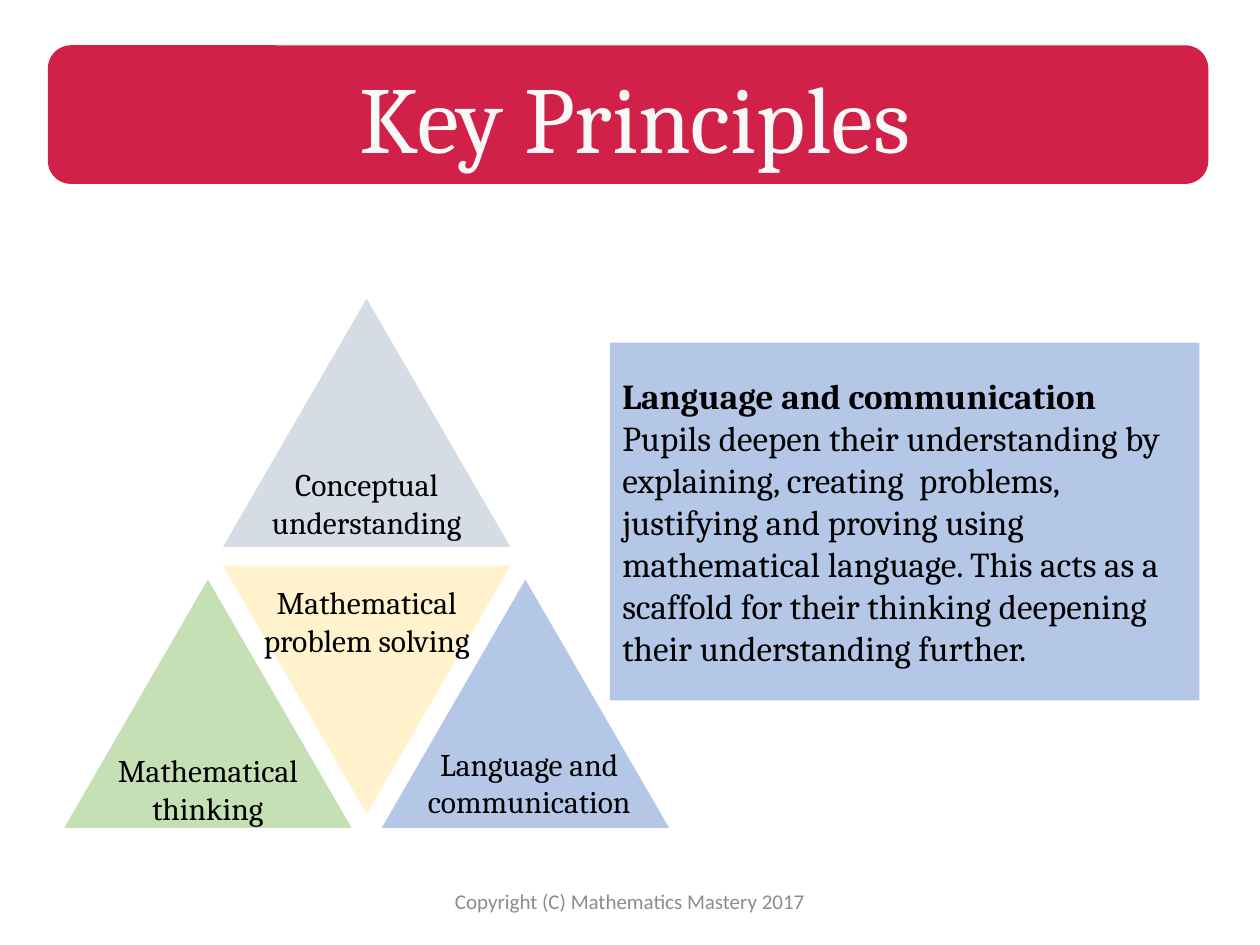
from pptx import Presentation
from pptx.dml.color import RGBColor
from pptx.enum.shapes import MSO_SHAPE as Preset
from pptx.enum.text import MSO_ANCHOR as Anchor, MSO_AUTO_SIZE as AutoSize, PP_ALIGN as Align
from pptx.util import Inches, Pt

RED = RGBColor(0xD1, 0x21, 0x49)
OFF_WHITE = RGBColor(0xF8, 0xF8, 0xF8)
BLACK = RGBColor(0x00, 0x00, 0x00)
GREY = RGBColor(0x8C, 0x8C, 0x8C)
PALE_GREY = RGBColor(0xD6, 0xDC, 0xE5)
PALE_BLUE = RGBColor(0xB4, 0xC7, 0xE7)
PALE_YELLOW = RGBColor(0xFF, 0xF2, 0xCC)
PALE_GREEN = RGBColor(0xC5, 0xE0, 0xB4)

TITLE_ONLY = 5
SIDE, HEIGHT = 2.28, 1.97  # one small triangle


def add_filled(slide, preset, box, color):
    shape = slide.shapes.add_shape(preset, *map(Inches, box))
    shape.shadow.inherit = False
    shape.fill.solid()
    shape.fill.fore_color.rgb = color
    shape.line.fill.background()
    return shape


def write(shape, lines, size, color=BLACK, font="Cambria", align=Align.CENTER, anchor=Anchor.TOP):
    frame = shape.text_frame
    frame.text = "\n".join(lines)
    frame.word_wrap = True
    frame.auto_size = AutoSize.NONE
    frame.vertical_anchor = anchor
    for paragraph in frame.paragraphs:
        paragraph.alignment = align
        paragraph.font.name = font
        paragraph.font.size = Pt(size)
        paragraph.font.color.rgb = color


def add_banner(slide, left, top, width, height):
    banner = add_filled(slide, Preset.ROUNDED_RECTANGLE, (left, top, width, height), RED)
    title = slide.shapes.title
    title._element.addprevious(banner._element)  # banner goes behind the title
    title.left, title.top = Inches(left + 0.13), Inches(top + 0.05)
    title.width, title.height = Inches(width - 0.15), Inches(height - 0.09)
    write(title, ["Key Principles"], 54, OFF_WHITE, anchor=Anchor.MIDDLE)


def add_pyramid(slide, left, top, width, height):
    column = (width - SIDE) / 2
    base = top + height - HEIGHT
    # column, triangle top, fill, rotation, label, label centre, label top, label width
    parts = [
        (1, top, PALE_GREY, 0, "Conceptual understanding", 2.91, 3.64, 2.05),
        (2, base, PALE_BLUE, 0, "Language and communication", 4.2, 5.86, 2.07),
        (1, base - 0.11, PALE_YELLOW, 180, "Mathematical problem solving", 2.91, 4.58, 1.85),
        (0, base, PALE_GREEN, 0, "Mathematical thinking", 1.65, 5.91, 1.79),
    ]
    for index, triangle_top, color, rotation, *_ in parts:
        box = (left + index * column, triangle_top, SIDE, HEIGHT)
        add_filled(slide, Preset.ISOSCELES_TRIANGLE, box, color).rotation = rotation
    # Labels lie over all triangles
    for *_, text, centre, label_top, label_width in parts:
        box = (centre - label_width / 2, label_top, label_width, 0.71)
        write(slide.shapes.add_textbox(*map(Inches, box)), [text], 18)


def add_explanation(slide, *box):
    panel = add_filled(slide, Preset.RECTANGLE, box, PALE_BLUE)
    write(panel, [
        "Language and communication",
        "Pupils deepen their understanding by explaining, creating  problems, justifying and "
        "proving using mathematical language. This acts as a scaffold for their thinking "
        "deepening their understanding further.",
    ], 20, align=Align.LEFT, anchor=Anchor.MIDDLE)
    panel.text_frame.paragraphs[0].font.bold = True


def add_footer(slide, *box):
    footer = slide.shapes.add_textbox(*map(Inches, box))
    write(footer, ["Copyright (C) Mathematics Mastery 2017"], 12, GREY, "Calibri",
          anchor=Anchor.MIDDLE)


def main():
    presentation = Presentation()
    presentation.slide_width, presentation.slide_height = Inches(10), Inches(7.5)
    slide = presentation.slides.add_slide(presentation.slide_layouts[TITLE_ONLY])
    add_banner(slide, 0.38, 0.36, 9.21, 1.1)
    add_pyramid(slide, 0.51, 2.37, 4.8, 4.2)
    add_explanation(slide, 4.84, 2.72, 4.68, 2.84)
    add_footer(slide, 3.31, 6.95, 3.38, 0.4)
    presentation.save("out.pptx")


if __name__ == "__main__":
    main()
